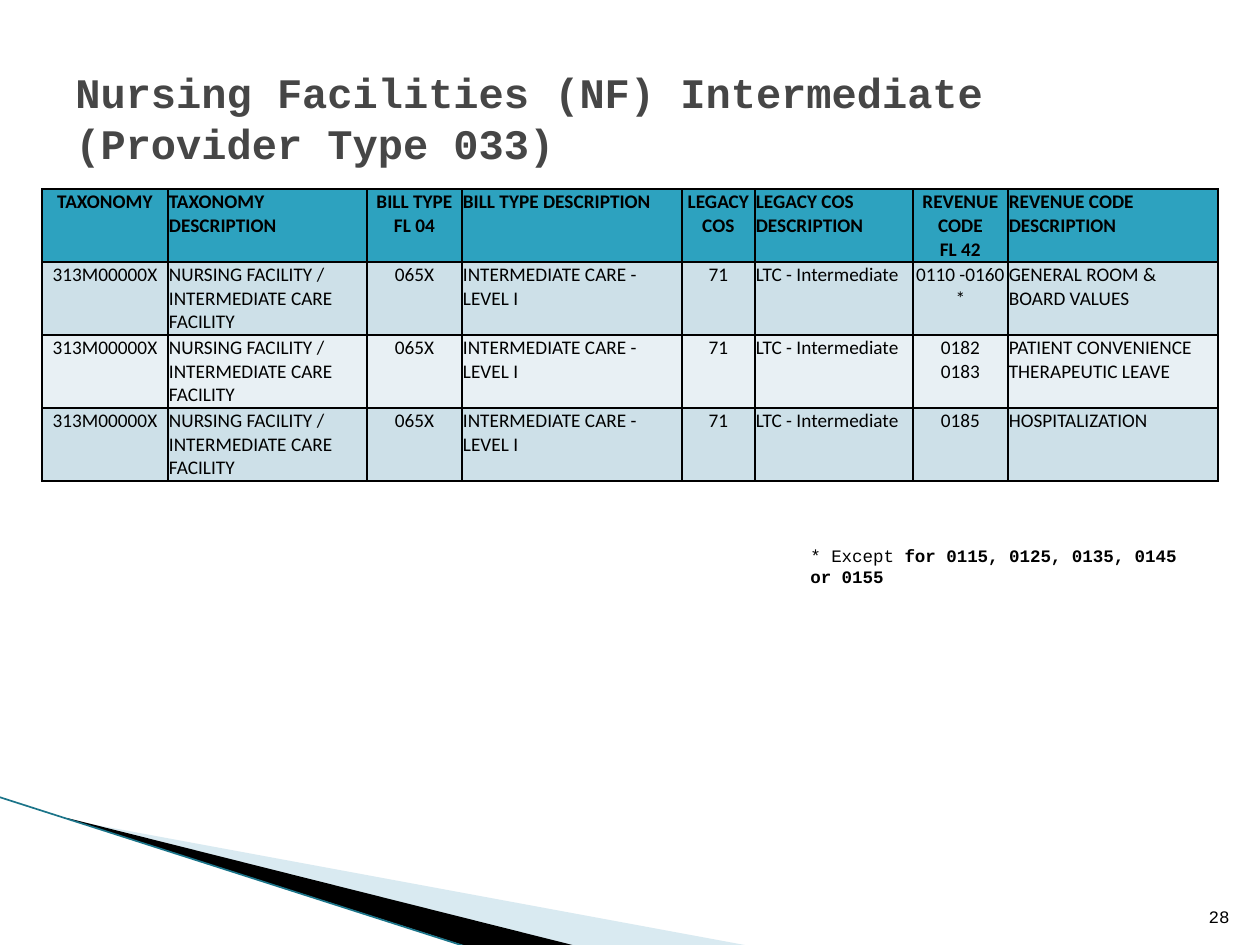
"""Build the nursing facilities provider type slide."""
from lxml.etree import SubElement
from pptx import Presentation
from pptx.dml.color import RGBColor
from pptx.enum.shapes import MSO_CONNECTOR
from pptx.enum.text import MSO_ANCHOR, PP_ALIGN
from pptx.oxml.ns import qn
from pptx.util import Emu, Pt

PX = 914400 // 126


def color(value):
    return RGBColor.from_string(value)


def add_text(left, top, width, height, size, ink, align=PP_ALIGN.LEFT, anchor=MSO_ANCHOR.TOP):
    box = page.shapes.add_textbox(left * PX, top * PX, width * PX, height * PX)
    box.text_frame.word_wrap = True
    box.text_frame.vertical_anchor = anchor
    para = box.text_frame.paragraphs[0]
    para.alignment = align
    para.font.name = "Courier New"
    para.font.size = Pt(size)
    para.font.color.rgb = color(ink)
    return para


deck = Presentation()
deck.slide_width = Emu(1260 * PX)
deck.slide_height = Emu(945 * PX)
page = deck.slides.add_slide(deck.slide_layouts[6])

wedges = [
    ("A0CBDC", 40, [(69, 820), (750, 946), (575, 946), (69, 819)]),
    ("000000", 100, [(67, 818), (576, 946), (469, 947), (68, 819)]),
]
for fill, opacity, points in wedges:
    builder = page.shapes.build_freeform(*points[0], scale=PX)
    builder.add_line_segments(points[1:], close=True)
    wedge = builder.convert_to_shape()
    wedge.shadow.inherit = False
    wedge.fill.solid()
    wedge.fill.fore_color.rgb = color(fill)
    wedge.line.fill.background()
    tint = wedge.fill._xPr.find(".//" + qn("a:srgbClr"))
    SubElement(tint, qn("a:alpha"), val=str(opacity * 1000))

edge = page.shapes.add_connector(MSO_CONNECTOR.STRAIGHT, -1 * PX, 797 * PX, 467 * PX, 947 * PX)
edge.line.color.rgb = color("1B7489")
edge.line.width = Pt(0.95)
SubElement(edge._element.spPr, qn("a:effectLst"))

facility = "NURSING FACILITY / INTERMEDIATE CARE FACILITY"
shared = ["313M00000X", facility, "065X", "INTERMEDIATE CARE - LEVEL I", "71", "LTC - Intermediate"]
rows = [
    ["TAXONOMY", "TAXONOMY DESCRIPTION", "BILL TYPE\vFL 04", "BILL TYPE DESCRIPTION",
     "LEGACY COS", "LEGACY COS DESCRIPTION", "REVENUE CODE\vFL 42", "REVENUE CODE DESCRIPTION"],
    shared + ["0110 -0160\v*", "GENERAL ROOM & BOARD VALUES"],
    shared + ["0182\v0183", "PATIENT CONVENIENCE\vTHERAPEUTIC LEAVE"],
    shared + ["0185", "HOSPITALIZATION"],
]
row_fills = ["2DA2BF", "CDE0E8", "E8F0F4", "CDE0E8"]
column_widths = [126, 199, 95, 220, 73, 158, 95, 210]
row_height = 73

frame = page.shapes.add_table(len(rows), len(column_widths), 42 * PX, 189 * PX,
                              sum(column_widths) * PX, len(rows) * row_height * PX)
table = frame.table
table.first_row = False
table.horz_banding = False
for column, width in zip(table.columns, column_widths):
    column.width = Emu(width * PX)
for row_index, (texts, fill) in enumerate(zip(rows, row_fills)):
    table.rows[row_index].height = Emu(row_height * PX)
    for column_index, text in enumerate(texts):
        cell = table.cell(row_index, column_index)
        cell.margin_left = cell.margin_right = cell.margin_top = Emu(PX)
        cell.margin_bottom = Emu(0)
        properties = cell._tc.get_or_add_tcPr()
        for side in ("lnL", "lnR", "lnT", "lnB"):
            border = SubElement(properties, qn(f"a:{side}"), w=str(Pt(1)))
            SubElement(SubElement(border, qn("a:solidFill")), qn("a:srgbClr"), val="000000")
        cell.fill.solid()
        cell.fill.fore_color.rgb = color(fill)
        para = cell.text_frame.paragraphs[0]
        para.text = text
        para.alignment = PP_ALIGN.LEFT if column_index % 2 else PP_ALIGN.CENTER
        para.font.name = "Calibri"
        para.font.size = Pt(11)
        para.font.bold = row_index == 0
        para.font.color.rgb = color("000000")

number = add_text(1192, 883, 50, 50, 10, "000000", PP_ALIGN.RIGHT, MSO_ANCHOR.BOTTOM)
number.text = "28"

title = add_text(63, 38, 1134, 158, 24, "464646", anchor=MSO_ANCHOR.MIDDLE)
title.text = "Nursing Facilities (NF) Intermediate\v(Provider Type 033)"
title.font.bold = True

note = add_text(798, 539, 420, 34, 10, "000000")
for text, bold in [("* Except ", False), ("for 0115, 0125, 0135, 0145 or 0155", True)]:
    span = note.add_run()
    span.text = text
    span.font.bold = bold

deck.save("out.pptx")
